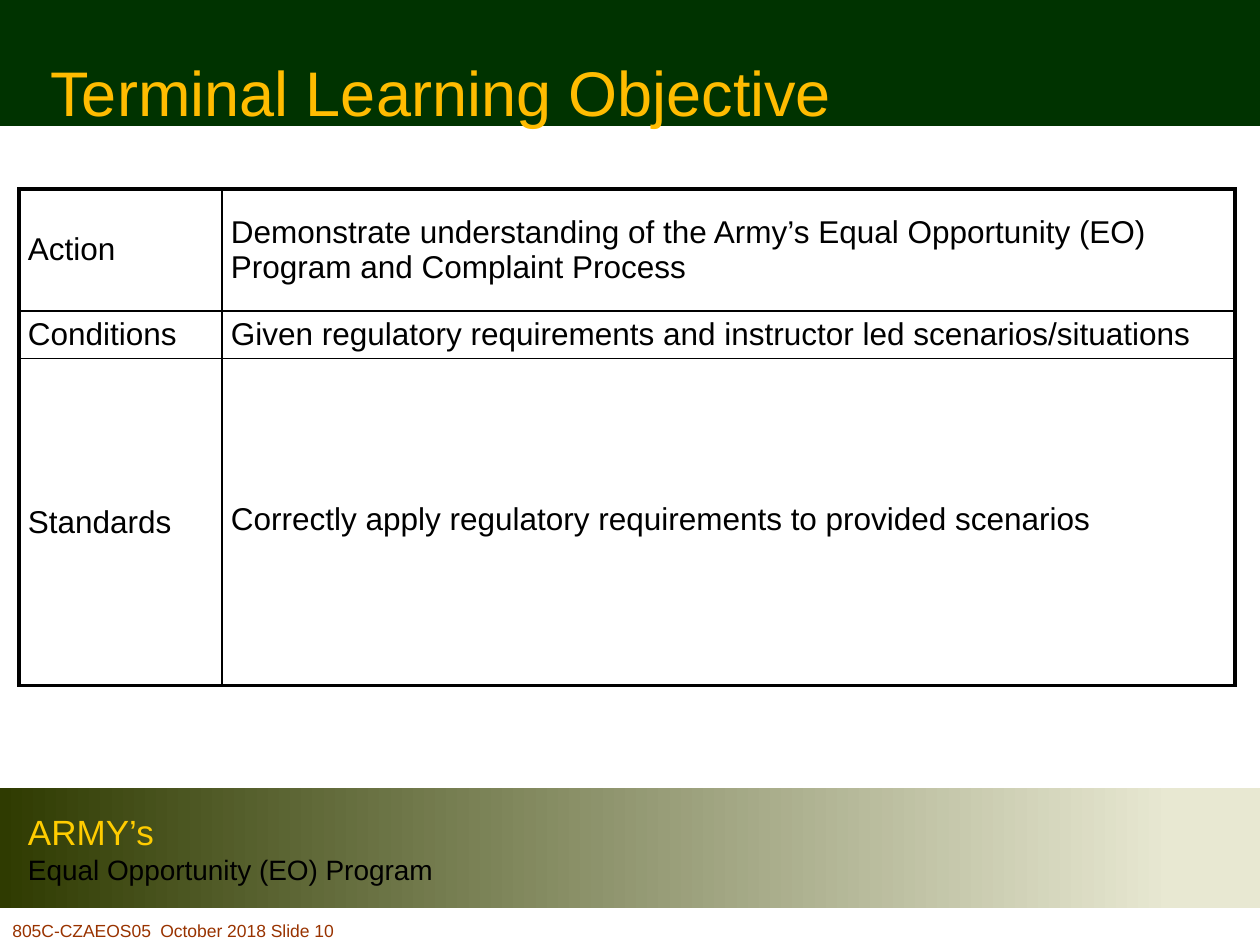
from lxml.etree import SubElement
from pptx import Presentation
from pptx.dml.color import RGBColor
from pptx.enum.shapes import MSO_SHAPE
from pptx.enum.text import MSO_ANCHOR, PP_ALIGN
from pptx.oxml import parse_xml
from pptx.oxml.ns import nsdecls, qn
from pptx.util import Emu, Pt

EMU_PER_PX = 914400 / 126
COLORS = {
    "header": "003300", "title": "FFBC01", "band_start": "2F3B01",
    "band_end": "E8E8D2", "program": "FFCC00", "text": "000000",
    "footer": "993300",
}
FORMATS = {
    "title": {"size": 36, "color": "title"},
    "program": {"size": 20, "color": "program"},
    "subtitle": {"size": 16, "color": "text"},
    "footer": {"size": 10, "color": "footer"},
    "cell": {"size": 18, "color": "text"},
}
OBJECTIVES = [
    ("Action", "Demonstrate understanding of the Army’s Equal Opportunity (EO) "
               "Program and Complaint Process"),
    ("Conditions", "Given regulatory requirements and instructor led scenarios/situations"),
    ("Standards", "Correctly apply regulatory requirements to provided scenarios"),
]
COLUMN_WIDTHS = [203, 1013]
ROW_HEIGHTS = [122, 45, 327]
OUTER_LINE, INNER_LINE = 2.25, 1


def px(length):
    return Emu(round(length * EMU_PER_PX))


def rgb(name):
    return RGBColor.from_string(COLORS[name])


def set_attributes(target, values):
    for name, value in values.items():
        setattr(target, name, value)


def write_paragraph(paragraph, text, format_name, alignment=PP_ALIGN.LEFT):
    style = FORMATS[format_name]
    paragraph.alignment = alignment
    run = paragraph.add_run()
    run.text = text
    set_attributes(run.font, {"name": "Arial", "size": Pt(style["size"])})
    run.font.color.rgb = rgb(style["color"])


def add_rectangle(slide, box):
    shape = slide.shapes.add_shape(MSO_SHAPE.RECTANGLE, *map(px, box))
    shape.shadow.inherit = False
    shape.line.fill.background()
    return shape


def add_header(slide, left, top, width, height):
    bar = add_rectangle(slide, (left, top, width, height))
    bar.fill.solid()
    bar.fill.fore_color.rgb = rgb("header")
    # Title sits low in the bar
    title = slide.shapes.add_textbox(px(left), px(top + 24), px(882), px(134))
    set_attributes(title.text_frame, {"word_wrap": True, "vertical_anchor": MSO_ANCHOR.MIDDLE})
    write_paragraph(title.text_frame.paragraphs[0], "Terminal Learning Objective",
                    "title", PP_ALIGN.CENTER)


def add_program_band(slide, left, top, width, height):
    band = add_rectangle(slide, (left, top, width, height))
    band.fill.gradient()
    band.fill.gradient_angle = 0
    stops = [("band_start", 0), ("band_end", 0.93)]
    for stop, (color, position) in zip(band.fill.gradient_stops, stops):
        stop.color.rgb = rgb(color)
        stop.position = position
    frame = band.text_frame
    set_attributes(frame, {"word_wrap": True, "margin_left": px(28),
                           "vertical_anchor": MSO_ANCHOR.MIDDLE})
    write_paragraph(frame.paragraphs[0], "ARMY’s", "program")
    write_paragraph(frame.add_paragraph(), "Equal Opportunity (EO) Program", "subtitle")


def add_footer(slide, left, top, width, height):
    box = slide.shapes.add_textbox(px(left), px(top), px(width), px(height))
    box.text_frame.word_wrap = True
    paragraph = box.text_frame.paragraphs[0]
    # Tab stop separates the course code from the date
    tabs = SubElement(paragraph._p.get_or_add_pPr(), qn("a:tabLst"))
    SubElement(tabs, qn("a:tab"), pos=str(px(148)), algn="l")
    write_paragraph(paragraph, "805C-CZAEOS05\tOctober 2018 Slide 10", "footer")


def set_borders(cell, widths):
    properties = cell._tc.get_or_add_tcPr()
    for index, (side, width) in enumerate(widths.items()):
        properties.insert(index, parse_xml(
            f'<a:ln{side} {nsdecls("a")} w="{Pt(width)}"><a:solidFill>'
            f'<a:srgbClr val="{COLORS["text"]}"/></a:solidFill></a:ln{side}>'))


def add_objectives_table(slide, left, top):
    rows, columns = len(ROW_HEIGHTS), len(COLUMN_WIDTHS)
    table = slide.shapes.add_table(rows, columns, px(left), px(top),
                                   px(sum(COLUMN_WIDTHS)), px(sum(ROW_HEIGHTS))).table
    set_attributes(table, {"first_row": False, "horz_banding": False})
    for column, width in zip(table.columns, COLUMN_WIDTHS):
        column.width = px(width)
    for row, height in zip(table.rows, ROW_HEIGHTS):
        row.height = px(height)
    for row_index, texts in enumerate(OBJECTIVES):
        for column_index, text in enumerate(texts):
            cell = table.cell(row_index, column_index)
            cell.fill.background()
            set_attributes(cell, {
                "vertical_anchor": MSO_ANCHOR.MIDDLE,
                "margin_left": px(9), "margin_right": px(9),
                "margin_top": px(5), "margin_bottom": px(5),
            })
            # Thick lines around the table, thin lines between cells
            on_edge = {"L": column_index == 0, "R": column_index == columns - 1,
                       "T": row_index == 0, "B": row_index == rows - 1}
            set_borders(cell, {side: OUTER_LINE if edge else INNER_LINE
                               for side, edge in on_edge.items()})
            write_paragraph(cell.text_frame.paragraphs[0], text, "cell")
    # The last objective sits slightly higher than its label
    table.cell(rows - 1, columns - 1).margin_top = 0


def main():
    presentation = Presentation()
    set_attributes(presentation, {"slide_width": px(1260), "slide_height": px(945)})
    slide = presentation.slides.add_slide(presentation.slide_layouts[6])
    add_header(slide, 0, 0, 1260, 126)
    add_program_band(slide, 0, 788, 1260, 120)
    add_footer(slide, 0, 914, 491, 31)
    add_objectives_table(slide, 19, 189)
    presentation.save("out.pptx")


if __name__ == "__main__":
    main()
